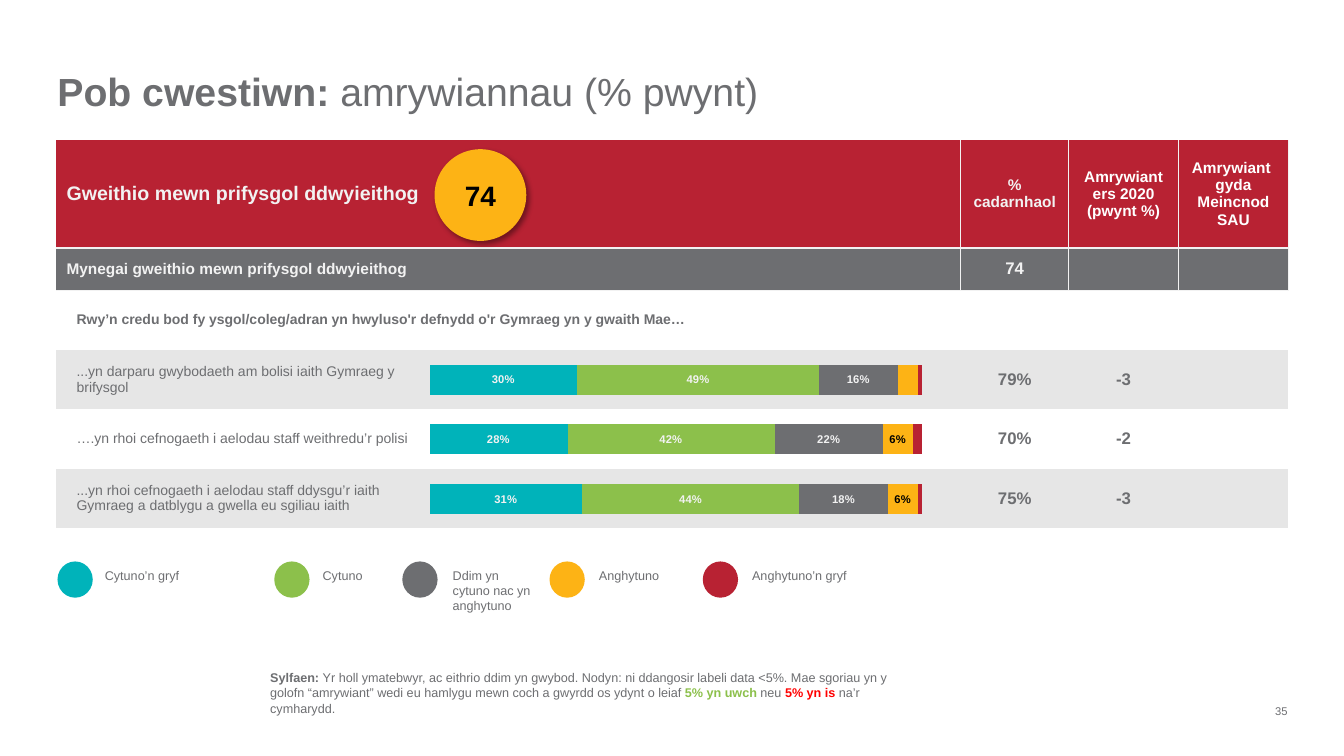
from lxml.etree import SubElement
from pptx import Presentation
from pptx.chart.data import CategoryChartData
from pptx.dml.color import RGBColor
from pptx.enum.chart import XL_CHART_TYPE, XL_LABEL_POSITION
from pptx.enum.shapes import MSO_SHAPE
from pptx.enum.text import MSO_ANCHOR, MSO_AUTO_SIZE, PP_ALIGN
from pptx.oxml.ns import qn
from pptx.util import Emu, Pt

PX = 9144  # 100 px to the inch
TEAL, GREEN, GREY, AMBER, RED = "00B3BA", "8CC04B", "6D6E71", "FDB315", "B82233"
PALE, BAND, WHITE, BLACK = "F2F2F2", "E6E6E6", "FFFFFF", "000000"
LABEL_MINIMUM = 0.05


def px(length):
    return Emu(length * PX)


def rgb(value):
    return RGBColor.from_string(value)


def add_xml(parent, tag, **attributes):
    return SubElement(parent, qn(tag), attributes)


def style(size, color=GREY, bold=False):
    return {"size": Pt(size), "bold": bold, "color": color}


class SurveySlide:
    font_name = "Arial"

    def __init__(self, slide):
        self.slide = slide
        self.shapes = slide.shapes

    def style_font(self, font, values):
        for name, value in {"name": self.font_name, **values}.items():
            if name == "color":
                font.color.rgb = rgb(value)
            else:
                setattr(font, name, value)

    def set_text(self, frame, runs, align=PP_ALIGN.LEFT, anchor=MSO_ANCHOR.TOP):
        settings = {"margin_left": 0, "margin_right": 0, "margin_top": 0,
                    "margin_bottom": 0, "word_wrap": True,
                    "auto_size": MSO_AUTO_SIZE.NONE, "vertical_anchor": anchor}
        for name, value in settings.items():
            setattr(frame, name, value)
        paragraph = frame.paragraphs[0]
        paragraph.alignment = align
        for words, values in runs:
            run = paragraph.add_run()
            run.text = words
            self.style_font(run.font, values)

    def title(self, box, runs):
        heading = self.shapes.title
        for name, value in zip(("left", "top", "width", "height"), box):
            setattr(heading, name, px(value))
        self.set_text(heading.text_frame, runs)

    def text(self, box, runs, **placing):
        area = self.shapes.add_textbox(*map(px, box))
        self.set_text(area.text_frame, runs, **placing)

    def circle(self, box, color):
        disc = self.shapes.add_shape(MSO_SHAPE.OVAL, *map(px, box))
        disc.shadow.inherit = False
        disc.fill.solid()
        disc.fill.fore_color.rgb = rgb(color)
        disc.line.fill.background()
        return disc

    def badge(self, box, color, runs):
        disc = self.circle(box, color)
        self.set_text(disc.text_frame, runs, PP_ALIGN.CENTER, MSO_ANCHOR.MIDDLE)
        effects = disc._element.spPr.find(qn("a:effectLst"))
        shadow = add_xml(effects, "a:outerShdw", blurRad=str(Pt(4)),
                         dist=str(Pt(3)), dir="2700000", algn="tl", rotWithShape="0")
        add_xml(add_xml(shadow, "a:srgbClr", val=BLACK), "a:alpha", val="40000")

    def borders(self, cell, sides):
        for side in sides:
            line = add_xml(cell._tc.get_or_add_tcPr(), f"a:ln{side}", w=str(Pt(1)))
            add_xml(add_xml(line, "a:solidFill"), "a:srgbClr", val=PALE)

    def table(self, box, widths, rows):
        grid = self.shapes.add_table(len(rows), len(widths), *map(px, box)).table
        grid.first_row = grid.horz_banding = False
        grid._tbl.tblPr.find(qn("a:tableStyleId")).text = \
            "{2D5ABB26-0587-4C30-8999-92F81FD0307C}"
        for column, width in zip(grid.columns, widths):
            column.width = px(width)
        for r, (height, fill, indent, border, formats, texts) in enumerate(rows):
            grid.rows[r].height = px(height)
            for c, (words, values) in enumerate(zip(texts, formats)):
                cell = grid.cell(r, c)
                self.borders(cell, [s for s in border if c or s != "L"])
                cell.vertical_anchor = MSO_ANCHOR.MIDDLE
                if fill:
                    cell.fill.solid()
                    cell.fill.fore_color.rgb = rgb(fill)
                else:
                    cell.fill.background()
                if c == 0:
                    cell.margin_left = px(indent)
                cell.text = words
                for paragraph in cell.text_frame.paragraphs:
                    paragraph.alignment = PP_ALIGN.CENTER if c else PP_ALIGN.LEFT
                    for run in paragraph.runs:
                        self.style_font(run.font, values)

    def stacked_bars(self, box, categories, answers):
        data = CategoryChartData(number_format="0%")
        data.categories = categories
        for number, (_, _, values) in enumerate(answers, 1):
            data.add_series(f"Series {number}", values)
        chart = self.shapes.add_chart(
            XL_CHART_TYPE.BAR_STACKED_100, *map(px, box), data).chart
        self.style_font(chart.font, style(8, WHITE))
        chart.has_legend = chart.has_title = False
        chart.category_axis.reverse_order = True
        chart.category_axis.visible = chart.value_axis.visible = False
        chart.value_axis.has_major_gridlines = False
        chart.value_axis.maximum_scale = 1
        plot = chart.plots[0]
        plot.gap_width, plot.overlap, plot.vary_by_categories = 100, 100, False
        for series, (color, label_color, values) in zip(plot.series, answers):
            series.format.fill.solid()
            series.format.fill.fore_color.rgb = rgb(color)
            if max(values) >= LABEL_MINIMUM:
                self.bar_labels(series.data_labels, label_color, values)
        # Stretch the plot over the whole chart area
        area = chart._chartSpace.chart.plotArea
        for old in area.findall(qn("c:layout")):
            area.remove(old)
        layout = add_xml(area, "c:layout")
        area.insert(0, layout)
        manual = add_xml(layout, "c:manualLayout")
        for tag, value in (("layoutTarget", "inner"), ("xMode", "edge"),
                           ("yMode", "edge"), ("x", "0"), ("y", "0"),
                           ("w", "1"), ("h", "1")):
            add_xml(manual, f"c:{tag}", val=value)

    def bar_labels(self, labels, color, values):
        self.style_font(labels.font, style(8, color, True))
        settings = {"show_value": True, "position": XL_LABEL_POSITION.CENTER,
                    "number_format": "0%", "number_format_is_linked": False}
        for name, value in settings.items():
            setattr(labels, name, value)
        small = [i for i, value in enumerate(values) if value < LABEL_MINIMUM]
        for place, index in enumerate(small):
            label = add_xml(labels._element, "c:dLbl")
            add_xml(label, "c:idx", val=str(index))
            add_xml(label, "c:delete", val="1")
            labels._element.insert(place, label)


def main():
    deck = Presentation()
    deck.slide_width, deck.slide_height = px(1333), px(750)
    page = SurveySlide(deck.slides.add_slide(deck.slide_layouts[5]))

    # Title and page number
    page.title((57, 67, 1110, 47), [("Pob cwestiwn: ", style(28, bold=True)),
                                    ("amrywiannau (% pwynt)", style(28))])
    page.text((1238, 699, 39, 13), [("35", style(8))],
              align=PP_ALIGN.RIGHT, anchor=MSO_ANCHOR.BOTTOM)

    # Results table
    heading, column_head = style(14, PALE, True), style(11, PALE, True)
    variance_head = style(11, WHITE, True)
    index_figure, figure = style(12, PALE, True), style(12, bold=True)
    statement = [style(10)] + [figure] * 3
    page.table((56, 139, 1222, 385), (897, 107, 109, 109), [
        (107, RED, 10, "LRB", [heading, column_head, variance_head, variance_head],
         ["Gweithio mewn prifysgol ddwyieithog", "% cadarnhaol",
          "Amrywiant ers 2020 (pwynt %)", "Amrywiant \vgyda Meincnod SAU"]),
        (42, GREY, 10, "LRT", [column_head] + [index_figure] * 3,
         ["Mynegai gweithio mewn prifysgol ddwyieithog", "74", "", ""]),
        (59, None, 20, "", [style(10, bold=True)] + [figure] * 3,
         ["Rwy’n credu bod fy ysgol/coleg/adran yn hwyluso'r defnydd o'r "
          "Gymraeg yn y gwaith Mae…", "", "", ""]),
        (59, BAND, 20, "", statement,
         ["...yn darparu gwybodaeth am bolisi iaith Gymraeg y\nbrifysgol",
          "79%", "-3", ""]),
        (59, WHITE, 20, "", statement,
         ["….yn rhoi cefnogaeth i aelodau staff weithredu’r polisi",
          "70%", "-2", ""]),
        (59, BAND, 20, "", statement,
         ["...yn rhoi cefnogaeth i aelodau staff ddysgu’r iaith\n"
          "Gymraeg a datblygu a gwella eu sgiliau iaith", "75%", "-3", ""]),
    ])

    # Answer shares for each statement
    page.stacked_bars((426, 347, 489, 178), ("1", "2", "3"), [
        (TEAL, PALE, (0.30, 0.28, 0.31)),
        (GREEN, PALE, (0.49, 0.42, 0.44)),
        (GREY, PALE, (0.16, 0.22, 0.18)),
        (AMBER, BLACK, (0.04, 0.06, 0.06)),
        (RED, PALE, (0.01, 0.02, 0.01)),
    ])

    # Legend
    for dot_left, label_left, width, color, answer in (
            (57, 104, 143, TEAL, "Cytuno’n gryf"),
            (272, 320, 63, GREEN, "Cytuno"),
            (399, 449, 78, GREY, "Ddim yn cytuno nac yn anghytuno"),
            (545, 594, 88, AMBER, "Anghytuno"),
            (697, 746, 170, RED, "Anghytuno’n gryf")):
        page.circle((dot_left, 557, 35, 36), color)
        page.text((label_left, 563, width, 49), [(answer, style(9))])

    # Base note
    page.text((268, 679, 617, 31), [
        ("Sylfaen: ", style(9, bold=True)),
        ("Yr holl ymatebwyr, ac eithrio ddim yn gwybod. Nodyn: ni ddangosir "
         "labeli data <5%. Mae sgoriau yn y golofn “amrywiant” wedi eu hamlygu "
         "mewn coch a gwyrdd os ydynt o leiaf ", style(9)),
        ("5% yn uwch ", style(9, GREEN, True)),
        ("neu ", style(9)),
        ("5% yn is ", style(9, "FF0000", True)),
        ("na’r cymharydd.", style(9)),
    ], anchor=MSO_ANCHOR.BOTTOM)

    # Index badge
    page.badge((431, 148, 91, 91), AMBER, [("74", style(20, BLACK, True))])

    deck.save("out.pptx")


if __name__ == "__main__":
    main()
